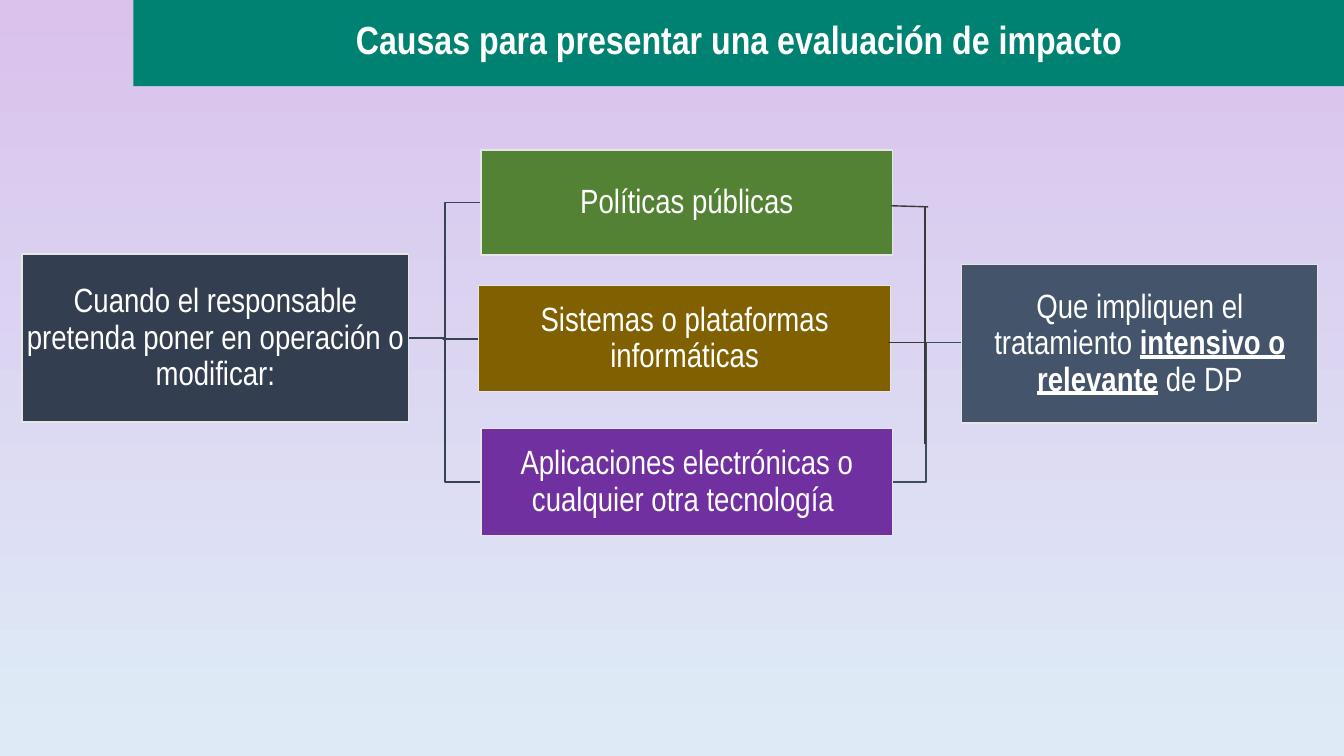
from lxml import etree
from pptx import Presentation, util as u
from pptx.dml import color as c
from pptx.enum import shapes, text
from pptx.oxml import ns

PX = 9525  # EMU per px
COLORS = {
    "sky_top": "DAC2EC", "sky_bottom": "DEEBF7", "banner": "008272",
    "white": "FFFFFF", "border": "E7E6E6",
    "trigger": "333F50", "policies": "548235", "systems": "806000",
    "apps": "7030A0", "effect": "44546A",
    "branch": "364355", "merge": "3E4C60", "joint": "3B3838",
}


class SlideBuilder:
    font = "Arial Narrow"
    line_width = u.Pt(1)

    def __init__(self, prs):
        self.slide = prs.slides.add_slide(prs.slide_layouts[5])

    def rgb(self, name):
        return c.RGBColor.from_string(COLORS[name])

    def emu(self, *lengths):
        return [u.Emu(length * PX) for length in lengths]

    def stroke(self, line, color):
        line.color.rgb = self.rgb(color)
        line.width = self.line_width

    def background(self, top, bottom):
        fill = self.slide.background.fill
        fill.gradient()
        fill.gradient_angle = 270
        for stop, color, position in zip(fill.gradient_stops, (top, bottom), (0, 0.98)):
            stop.color.rgb = self.rgb(color)
            stop.position = position

    def centred_text(self, frame, parts, size):
        """Centre the parts; those marked True are bold and underlined."""
        frame.word_wrap = True
        frame.auto_size = text.MSO_AUTO_SIZE.NONE
        frame.vertical_anchor = text.MSO_ANCHOR.MIDDLE
        paragraph = frame.paragraphs[0]
        paragraph.alignment = text.PP_ALIGN.CENTER
        paragraph.line_spacing = 0.9
        for wording, strong in parts:
            run = paragraph.add_run()
            run.text = wording
            run.font.name = self.font
            run.font.size = u.Pt(size)
            run.font.color.rgb = self.rgb("white")
            run.font.bold = run.font.underline = strong

    def title(self, wording, box):
        banner = self.slide.shapes.title
        banner.left, banner.top, banner.width, banner.height = self.emu(*box)
        banner.fill.solid()
        banner.fill.fore_color.rgb = self.rgb("banner")
        self.centred_text(banner.text_frame, [(wording, False)], 28)
        banner.text_frame.paragraphs[0].runs[0].font.bold = True

    def box(self, box, color, *parts):
        block = self.slide.shapes.add_shape(shapes.MSO_SHAPE.RECTANGLE, *self.emu(*box))
        block.shadow.inherit = False
        block.fill.solid()
        block.fill.fore_color.rgb = self.rgb(color)
        self.stroke(block.line, "border")
        frame = block.text_frame
        frame.margin_left = frame.margin_right = u.Inches(0.02)
        frame.margin_top = frame.margin_bottom = u.Inches(0.02)
        self.centred_text(frame, parts, 24)

    def elbow(self, start, bend_x, end, color):
        builder = self.slide.shapes.build_freeform(*start, scale=PX)
        corners = [(bend_x, start[1]), (bend_x, end[1]), end]
        builder.add_line_segments(corners, close=False)
        route = builder.convert_to_shape()
        route.shadow.inherit = False
        route.fill.background()
        self.stroke(route.line, color)

    def line(self, start, end, color):
        joint = self.slide.shapes.add_connector(
            shapes.MSO_CONNECTOR.STRAIGHT, *self.emu(*start, *end))
        self.stroke(joint.line, color)
        etree.SubElement(joint._element.spPr, ns.qn("a:effectLst"))


def main():
    prs = Presentation()
    prs.slide_width, prs.slide_height = u.Emu(1280 * PX), u.Emu(720 * PX)
    page = SlideBuilder(prs)
    page.background("sky_top", "sky_bottom")
    page.title("Causas para presentar una evaluación de impacto", (127, -2, 1153, 84))

    # Branches from the trigger, and the merge into the effect
    page.elbow((850, 459), 882, (916, 326), "merge")
    for bend_x, end in [(424, (458, 459)), (422, (456, 323)), (424, (458, 193))]:
        page.elbow((389, 322), bend_x, end, "branch")

    # Trigger, three kinds of project, effect
    page.box((21, 242, 368, 160), "trigger",
             ("Cuando el responsable pretenda poner en operación o modificar:", False))
    projects = [
        (458, 143, 100, "policies", "Políticas públicas"),
        (456, 272, 101, "systems", "Sistemas o plataformas informáticas"),
        (458, 408, 102, "apps", "Aplicaciones electrónicas o cualquier otra tecnología "),
    ]
    for left, top, height, color, wording in projects:
        page.box((left, top, 392, height), color, (wording, False))
    page.box((916, 252, 339, 151), "effect",
             ("Que impliquen el tratamiento ", False),
             ("intensivo o relevante", True), (" de DP", False))

    # Straight joints on the right
    for start, end in [((884, 197), (849, 196)), ((881, 423), (881, 196)),
                       ((881, 326), (846, 326))]:
        page.line(start, end, "joint")

    prs.save("out.pptx")


if __name__ == "__main__":
    main()
